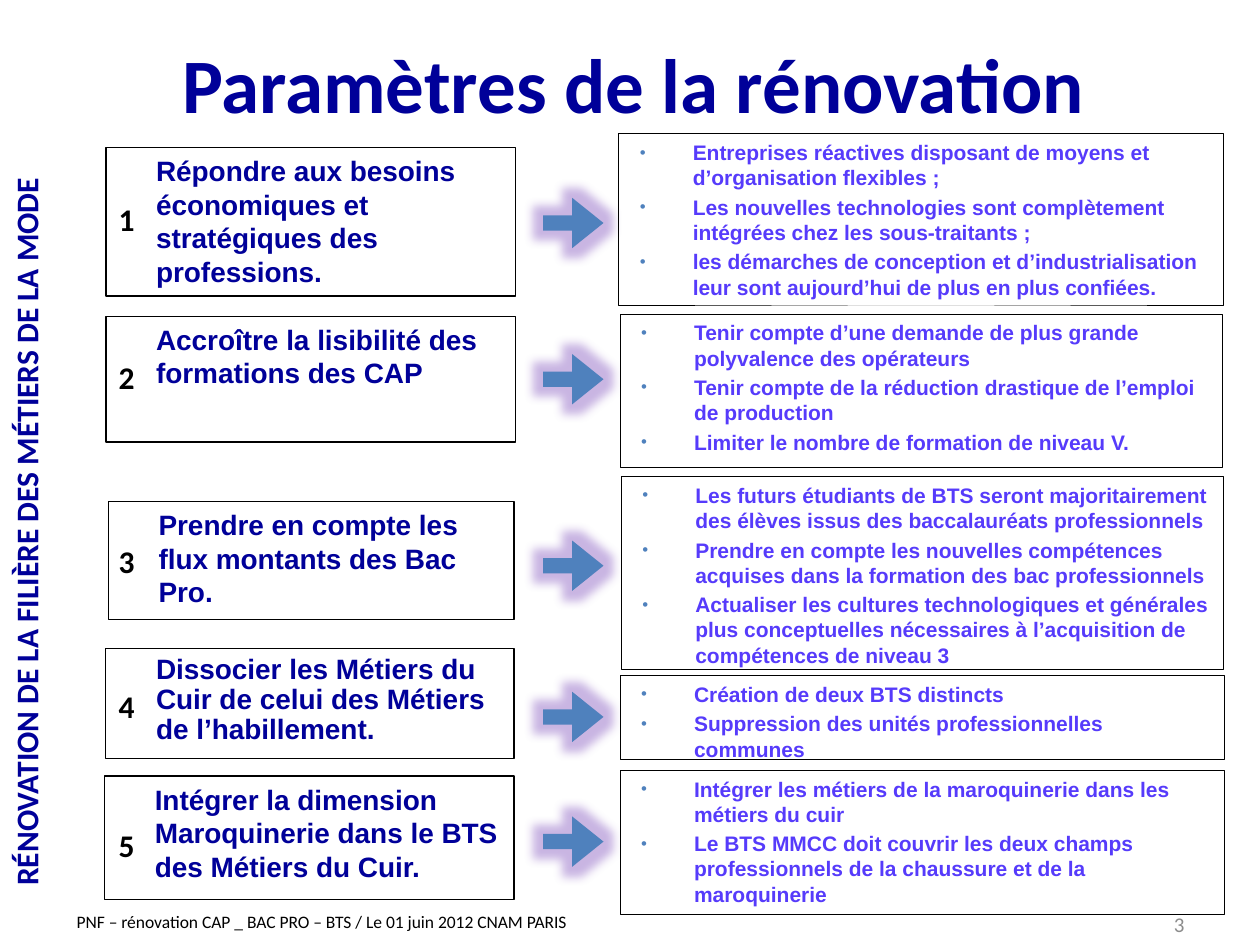
from lxml import etree
from pptx import Presentation
from pptx.dml.color import RGBColor
from pptx.enum import shapes, text
from pptx.oxml.ns import qn
from pptx.util import Inches, Pt

NAVY, VIOLET, BLUE, BLACK, GREY = "000099", "563BFB", "4F81BD", "000000", "8C8C8C"
GLOW = "7846B9"

TITLE = "Paramètres de la rénovation"
SIDE = "RÉNOVATION DE LA FILIÈRE DES MÉTIERS DE LA MODE"
FOOTER = "PNF – rénovation CAP _ BAC PRO – BTS / Le 01 juin 2012 CNAM PARIS"
PAGE = "3"

# Each row: goal, its box, number top, arrow top, details box, details
ROWS = [
    ("Répondre aux besoins économiques et stratégiques des professions.",
     (0.84, 1.17, 3.25, 1.18), 1.54, 1.57, (4.91, 1.06, 4.8, 1.36),
     ["Entreprises réactives disposant de moyens et d’organisation flexibles ;",
      "Les nouvelles technologies sont complètement intégrées chez les sous-traitants ;",
      "les démarches de conception et d’industrialisation leur sont aujourd’hui "
      "de plus en plus confiées."]),
    ("Accroître la lisibilité des formations des CAP",
     (0.84, 2.51, 3.25, 1), 2.79, 2.81, (4.92, 2.49, 4.78, 1.22),
     ["Tenir compte d’une demande de plus grande polyvalence des opérateurs",
      "Tenir compte de la réduction drastique de l’emploi de production",
      "Limiter le nombre de formation de niveau V."]),
    ("Prendre en compte les flux montants des Bac Pro.",
     (0.86, 3.98, 3.22, 0.94), 4.25, 4.29, (4.93, 3.78, 4.78, 1.53),
     ["Les futurs étudiants de BTS seront majoritairement des élèves issus des "
      "baccalauréats professionnels",
      "Prendre en compte les nouvelles compétences acquises dans la formation des "
      "bac professionnels",
      "Actualiser les cultures technologiques et générales plus conceptuelles "
      "nécessaires à l’acquisition de compétences de niveau 3"]),
    ("Dissocier les Métiers du Cuir de celui des Métiers de l’habillement.",
     (0.84, 5.15, 3.24, 0.87), 5.4, 5.49, (4.92, 5.36, 4.8, 0.67),
     ["Création de deux BTS distincts",
      "Suppression des unités professionnelles communes"]),
    ("Intégrer la dimension Maroquinerie dans le BTS des Métiers du Cuir.",
     (0.83, 6.16, 3.25, 0.98), 6.51, 6.48, (4.92, 6.11, 4.8, 1.15),
     ["Intégrer les métiers de la maroquinerie dans les métiers du cuir",
      "Le BTS MMCC doit couvrir les deux champs professionnels de la chaussure "
      "et de la maroquinerie"]),
]
TIGHT_ROW = 4  # the goal set with narrower line spacing

LEFT, CENTER, RIGHT = text.PP_ALIGN.LEFT, text.PP_ALIGN.CENTER, text.PP_ALIGN.RIGHT
TOP, MIDDLE = text.MSO_ANCHOR.TOP, text.MSO_ANCHOR.MIDDLE

prs = Presentation()
prs.slide_width, prs.slide_height = Inches(10), Inches(7.5)
s = prs.slides.add_slide(prs.slide_layouts[6])


def color(value):
    return RGBColor.from_string(value)


def write(sp, lines, size, hue, font="Calibri", bold=True, align=LEFT, anchor=TOP):
    tf = sp.text_frame
    tf.word_wrap = True
    tf.vertical_anchor = anchor
    tf.text = "\n".join(lines)
    for i, p in enumerate(tf.paragraphs):
        p.alignment = align
        if i:
            p.space_before = Pt(size * 0.2)
        for r in p.runs:
            r.font.size, r.font.name, r.font.bold = Pt(size), font, bold
            r.font.color.rgb = color(hue)
    return tf.paragraphs


def label(box, words, size, hue, grow=True, **style):
    sp = s.shapes.add_textbox(*map(Inches, box))
    write(sp, [words], size, hue, **style)
    if grow:
        sp.text_frame.auto_size = text.MSO_AUTO_SIZE.SHAPE_TO_FIT_TEXT
    return sp


def frame(box, line_width):
    sp = s.shapes.add_shape(shapes.MSO_SHAPE.RECTANGLE, *map(Inches, box))
    sp.shadow.inherit = False
    sp.fill.background()
    sp.line.color.rgb = color(BLACK)
    sp.line.width = Pt(line_width)
    return sp


def indent(p, margin, first=0):
    pPr = p._p.get_or_add_pPr()
    pPr.set("marL", str(Inches(margin)))
    pPr.set("indent", str(Inches(first)))
    return pPr


def bullet(p):
    pPr = indent(p, 0.49, -0.42)
    clr = etree.SubElement(pPr, qn("a:buClr"))
    etree.SubElement(clr, qn("a:srgbClr"), val=BLUE)
    etree.SubElement(pPr, qn("a:buSzPct"), val="80000")
    etree.SubElement(pPr, qn("a:buFont"), typeface="Arial")
    etree.SubElement(pPr, qn("a:buChar"), char="•")


def arrow(top):
    sp = s.shapes.add_shape(shapes.MSO_SHAPE.RIGHT_ARROW,
                            *map(Inches, (4.31, top, 0.48, 0.4)))
    sp.adjustments[0], sp.adjustments[1] = 0.303, 0.623
    sp.fill.solid()
    sp.fill.fore_color.rgb = color(BLUE)
    sp.line.fill.background()
    sp.shadow.inherit = False
    # Soft violet glow
    effects = sp._element.spPr.find(qn("a:effectLst"))
    glow = etree.SubElement(effects, qn("a:glow"), rad=str(Pt(11)))
    clr = etree.SubElement(glow, qn("a:srgbClr"), val=GLOW)
    etree.SubElement(clr, qn("a:alpha"), val="40000")


# Side banner, footer, title and page number
label((-2.75, 4.02, 5.91, 0.4), SIDE, 18, NAVY, align=CENTER).rotation = 270
label((0.51, 7.18, 4.53, 0.27), FOOTER, 10, BLACK, bold=False)
label((0.53, 0.23, 9, 0.86), TITLE, 44, NAVY, grow=False, align=CENTER, anchor=MIDDLE)
label((8.7, 7.23, 0.8, 0.21), PAGE, 12, GREY, grow=False, bold=False,
      align=RIGHT, anchor=MIDDLE)

# Rows: number, goal, arrow, details
for n, (goal, goal_box, number_top, arrow_top, detail_box, details) in enumerate(ROWS, 1):
    label((0.77, number_top, 0.47, 0.4), str(n), 18, BLACK, align=CENTER)
    p = write(frame(goal_box, 0.75), [goal], 16, NAVY, font="Arial")[0]
    p.level = 1
    indent(p, 0.3)
    if n == TIGHT_ROW:
        p.line_spacing = 0.9
    arrow(arrow_top)
    for p in write(frame(detail_box, 0.25), details, 12, VIOLET, font="Arial"):
        bullet(p)

prs.save("out.pptx")
